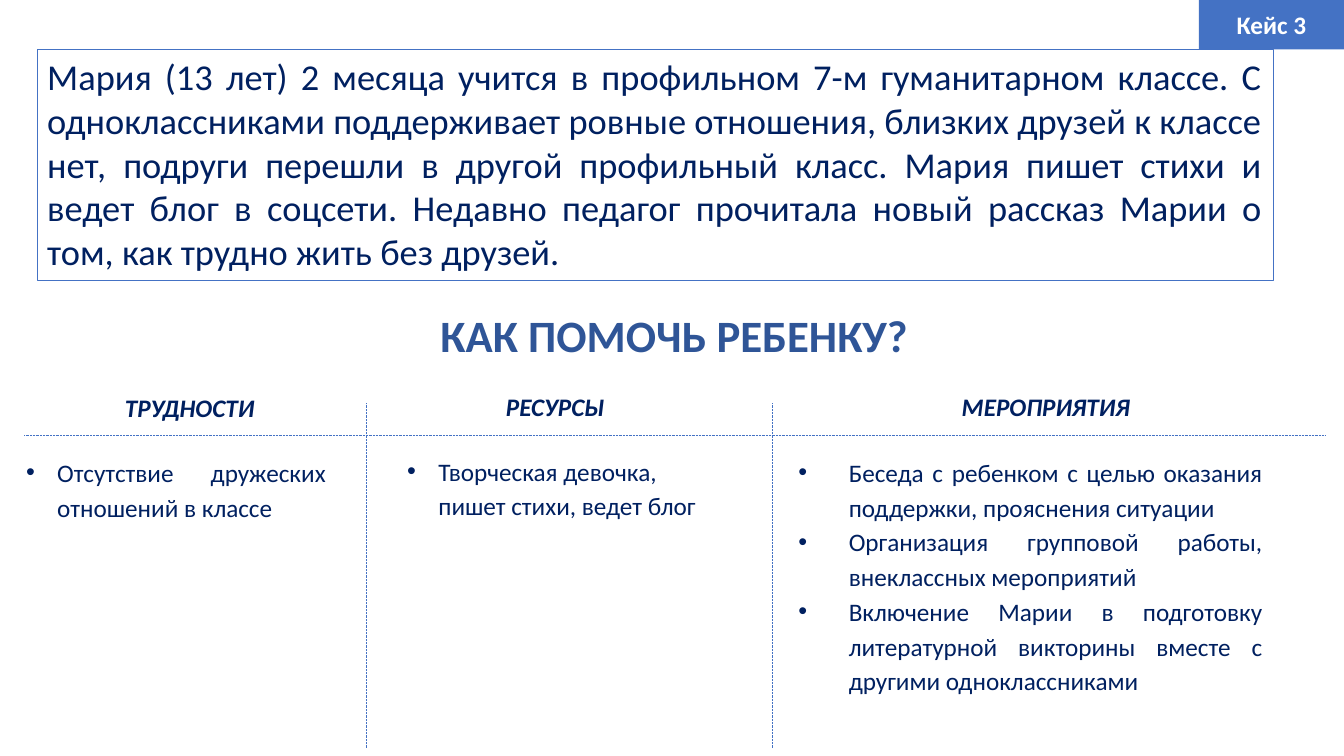
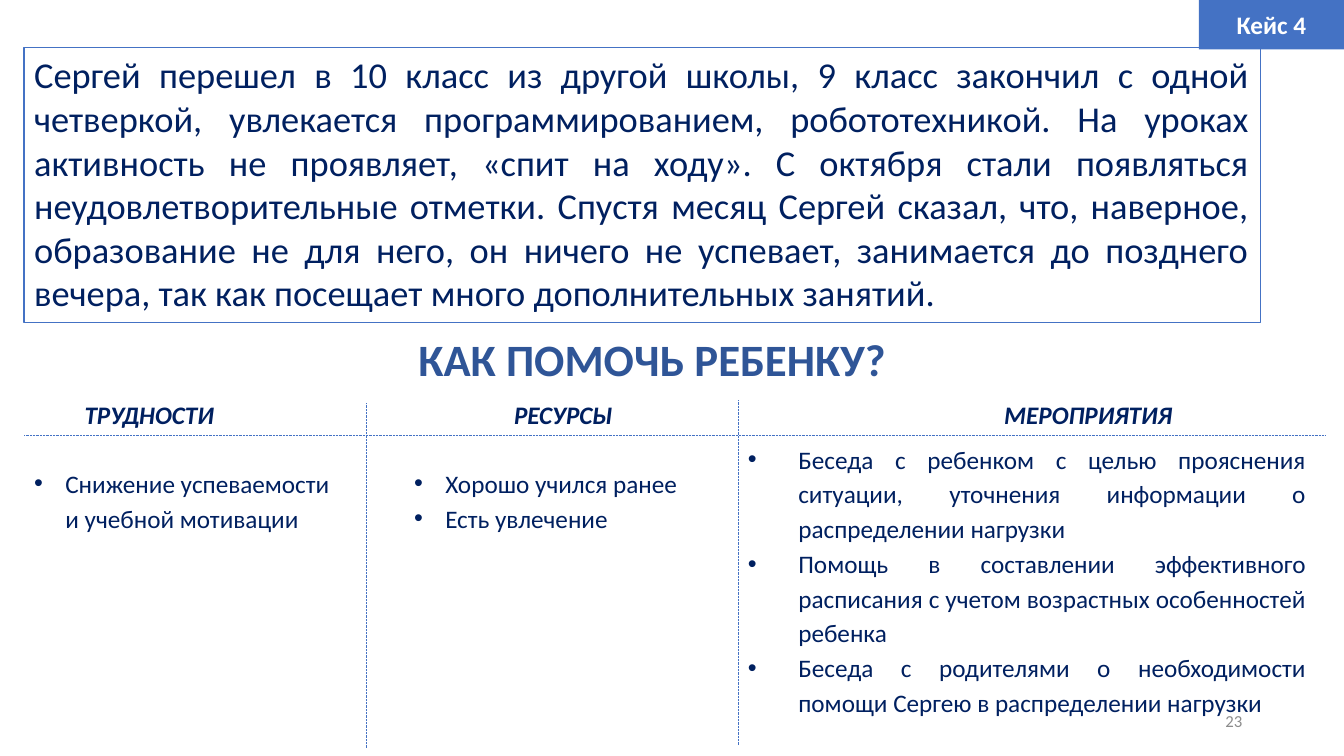
from dataclasses import dataclass

from lxml import etree
from pptx import Presentation
from pptx.dml.color import RGBColor
from pptx.enum import dml, shapes, text
from pptx.oxml.ns import qn
from pptx.util import Inches, Pt

# Shared style
FONT = "Calibri"
NAVY, BLUE, TITLE_BLUE, GREY, WHITE = "002060", "4472C4", "2F5597", "8C8C8C", "FFFFFF"
LEFT, CENTER = text.PP_ALIGN.LEFT, text.PP_ALIGN.CENTER
RIGHT, JUSTIFY = text.PP_ALIGN.RIGHT, text.PP_ALIGN.JUSTIFY
TOP, MIDDLE = text.MSO_ANCHOR.TOP, text.MSO_ANCHOR.MIDDLE
TITLE = "КАК ПОМОЧЬ РЕБЕНКУ?"
HEADINGS = [("ТРУДНОСТИ", 1.5), ("РЕСУРСЫ", 1.19), ("МЕРОПРИЯТИЯ", 1.89)]
RULE_Y = 4.32


@dataclass
class Column:
    heading_at: tuple[float, float]
    box: tuple[float, float, float, float]
    bullets: list[str]
    align: text.PP_ALIGN = JUSTIFY
    indent: float = 0.31


@dataclass
class Case:
    number: int
    story: str
    story_box: tuple[float, float, float, float]
    title_at: tuple[float, float]
    columns: list[Column]
    dividers: list[tuple[float, float]]
    page: str = ""


CASES = [
    Case(
        3,
        "Мария (13 лет) 2 месяца учится в профильном 7-м гуманитарном классе. "
        "С одноклассниками поддерживает ровные отношения, близких друзей к классе нет, "
        "подруги перешли в другой профильный класс. Мария пишет стихи и ведет блог в соцсети. "
        "Недавно педагог прочитала новый рассказ Марии о том, как трудно жить без друзей.",
        (0.37, 0.49, 12.26, 2.29),
        (1.26, 2.97),
        [
            Column((1.14, 3.84), (0.16, 4.44, 3.17, 0.78),
                   ["Отсутствие дружеских отношений в классе"]),
            Column((4.92, 3.83), (3.94, 4.43, 3.17, 0.78),
                   ["Творческая девочка, пишет стихи, ведет блог"], LEFT),
            Column((9.44, 3.83), (7.82, 4.44, 4.8, 2.52),
                   ["Беседа с ребенком с целью оказания поддержки, прояснения ситуации",
                    "Организация групповой работы, внеклассных мероприятий",
                    "Включение Марии в подготовку литературной викторины вместе "
                    "с другими одноклассниками"], indent=0.5),
        ],
        [(3.63, 4), (7.66, 4)],
    ),
    Case(
        4,
        "Сергей перешел в 10 класс из другой школы, 9 класс закончил с одной четверкой, "
        "увлекается программированием, робототехникой. На уроках активность не проявляет, "
        "«спит на ходу». С октября стали появляться неудовлетворительные отметки. "
        "Спустя месяц Сергей сказал, что, наверное, образование не для него, он ничего "
        "не успевает, занимается до позднего вечера, так как посещает много "
        "дополнительных занятий.",
        (0.24, 0.47, 12.26, 2.73),
        (1.04, 3.2),
        [
            Column((0.74, 3.91), (0.24, 4.55, 3.17, 0.78),
                   ["Снижение успеваемости и учебной мотивации"], LEFT),
            Column((5, 3.91), (4.01, 4.55, 3.17, 0.78),
                   ["Хорошо учился ранее", "Есть увлечение"]),
            Column((9.86, 3.91), (7.32, 4.31, 5.73, 2.87),
                   ["Беседа с ребенком с целью прояснения ситуации, уточнения информации "
                    "о распределении нагрузки",
                    "Помощь в составлении эффективного расписания с учетом возрастных "
                    "особенностей ребенка",
                    "Беседа с родителями о необходимости помощи Сергею "
                    "в распределении нагрузки"], indent=0.5),
        ],
        [(3.63, 4), (7.32, 3.97)],
        "23",
    ),
]


def rgb(color: str) -> RGBColor:
    return RGBColor.from_string(color)


def add_bullet(p, indent: float) -> None:
    pPr = p._p.get_or_add_pPr()
    pPr.set("marL", str(Inches(indent)))
    pPr.set("indent", str(-Inches(indent)))
    etree.SubElement(pPr, qn("a:buFont")).set("typeface", "Arial")
    etree.SubElement(pPr, qn("a:buChar")).set("char", "•")


def write(sp, lines: list[str], size: float, color: str, align=LEFT, anchor=TOP,
          bold=False, italic=False, wrap=True, spacing=1.0, indent=0.0) -> None:
    tf = sp.text_frame
    tf.auto_size = text.MSO_AUTO_SIZE.NONE
    tf.word_wrap = wrap
    tf.vertical_anchor = anchor
    for i, line in enumerate(lines):
        p = tf.add_paragraph() if i else tf.paragraphs[0]
        if indent:
            add_bullet(p, indent)
        p.alignment = align
        p.line_spacing = spacing
        p.space_before = Pt(0)
        r = p.add_run()
        r.text = line
        r.font.name, r.font.size = FONT, Pt(size)
        r.font.bold, r.font.italic = bold, italic
        r.font.color.rgb = rgb(color)


def add_text(s, box: tuple[float, float, float, float], lines: list[str], size: float,
             color: str, **style) -> None:
    write(s.shapes.add_textbox(*map(Inches, box)), lines, size, color, **style)


def add_box(s, box: tuple[float, float, float, float], fill: str, line: str = ""):
    sp = s.shapes.add_shape(shapes.MSO_SHAPE.RECTANGLE, *map(Inches, box))
    sp.shadow.inherit = False
    sp.fill.solid()
    sp.fill.fore_color.rgb = rgb(fill)
    if line:
        sp.line.color.rgb = rgb(line)
        sp.line.width = Pt(1)
    else:
        sp.line.fill.background()
    return sp


def add_dotted(s, x1: float, y1: float, x2: float, y2: float) -> None:
    ln = s.shapes.add_connector(shapes.MSO_CONNECTOR.STRAIGHT,
                                *map(Inches, (x1, y1, x2, y2)))
    ln.line.color.rgb = rgb(BLUE)
    ln.line.width = Pt(0.5)
    ln.line.dash_style = dml.MSO_LINE.ROUND_DOT
    etree.SubElement(ln._element.spPr, qn("a:effectLst"))


def add_case(prs, case: Case) -> None:
    s = prs.slides.add_slide(prs.slide_layouts[5])

    # Question heading
    title = s.shapes.title
    title.left, title.top = map(Inches, case.title_at)
    title.width, title.height = Inches(10.86), Inches(0.65)
    write(title, [TITLE], 32, TITLE_BLUE, align=CENTER, bold=True, spacing=1.07)

    # Case story
    story = add_box(s, case.story_box, WHITE, BLUE)
    write(story, [case.story], 26, NAVY, align=JUSTIFY)

    # Three columns
    for (heading, width), col in zip(HEADINGS, case.columns):
        add_text(s, (*col.heading_at, width, 0.4), [heading], 18, NAVY,
                 bold=True, italic=True, wrap=False)
        add_text(s, col.box, col.bullets, 18, NAVY, align=col.align,
                 spacing=1.15, indent=col.indent)

    # Dotted grid
    for x, y in case.dividers:
        add_dotted(s, x, y, x, y + 3.42)
    add_dotted(s, 0.24, RULE_Y, 13.14, RULE_Y)

    # Case badge and page number
    badge = add_box(s, (11.89, 0, 1.44, 0.49), BLUE)
    write(badge, [f"Кейс {case.number}"], 18, WHITE, align=CENTER, anchor=MIDDLE, bold=True)
    if case.page:
        add_text(s, (9.42, 6.95, 3, 0.4), [case.page], 12, GREY, align=RIGHT, anchor=MIDDLE)


def main() -> None:
    prs = Presentation()
    prs.slide_width, prs.slide_height = Inches(13.33), Inches(7.5)
    for case in CASES:
        add_case(prs, case)
    prs.save("out.pptx")


if __name__ == "__main__":
    main()
